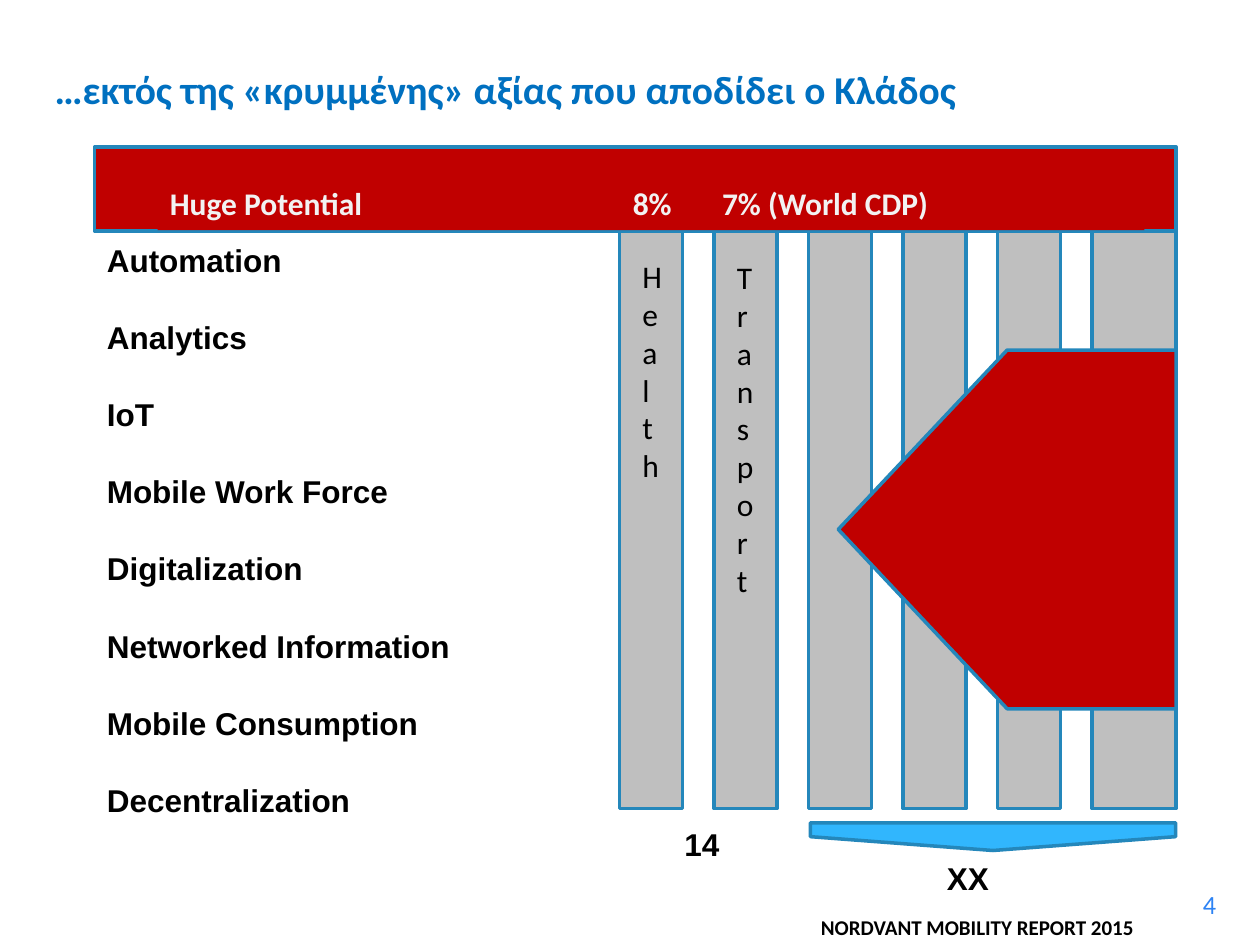
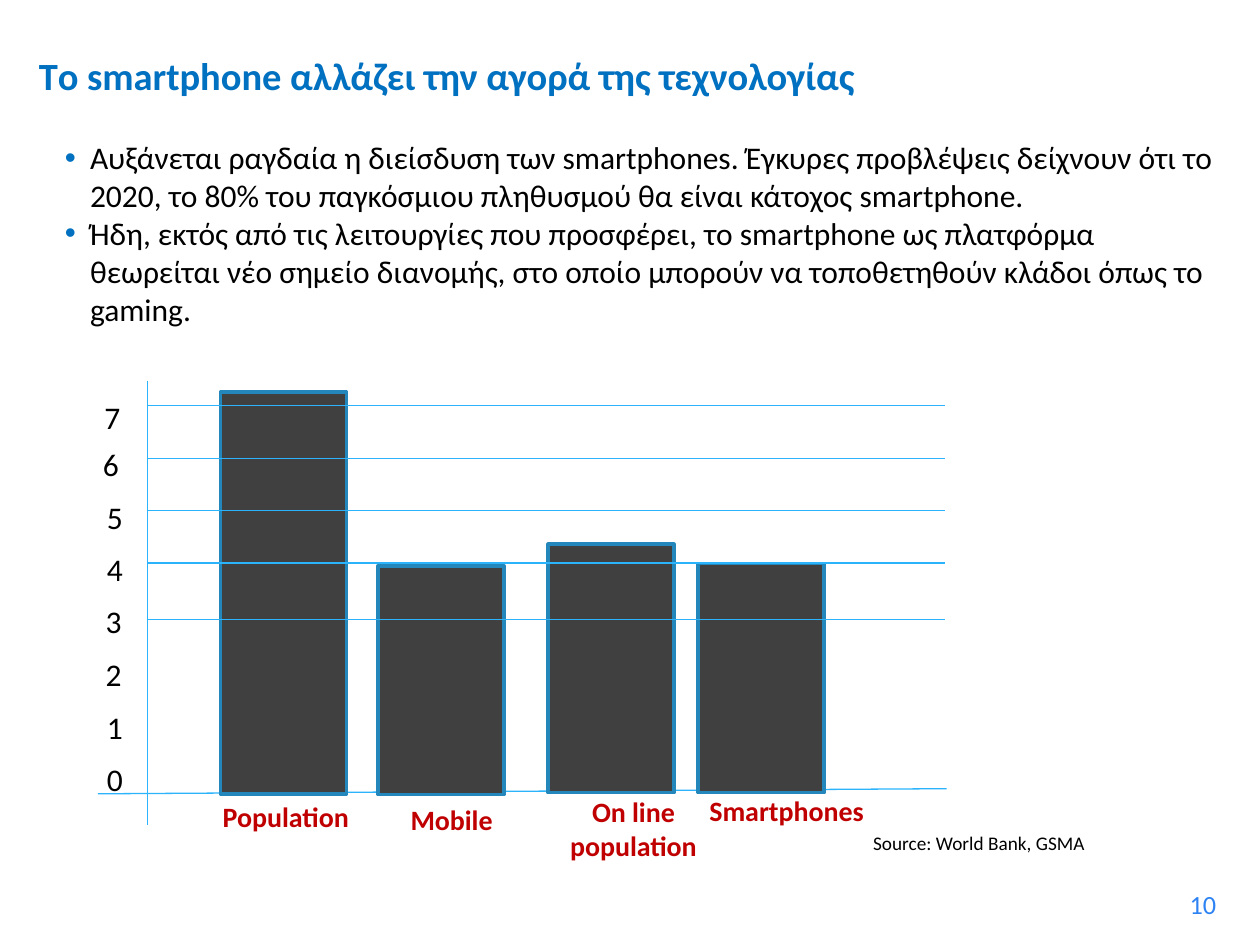
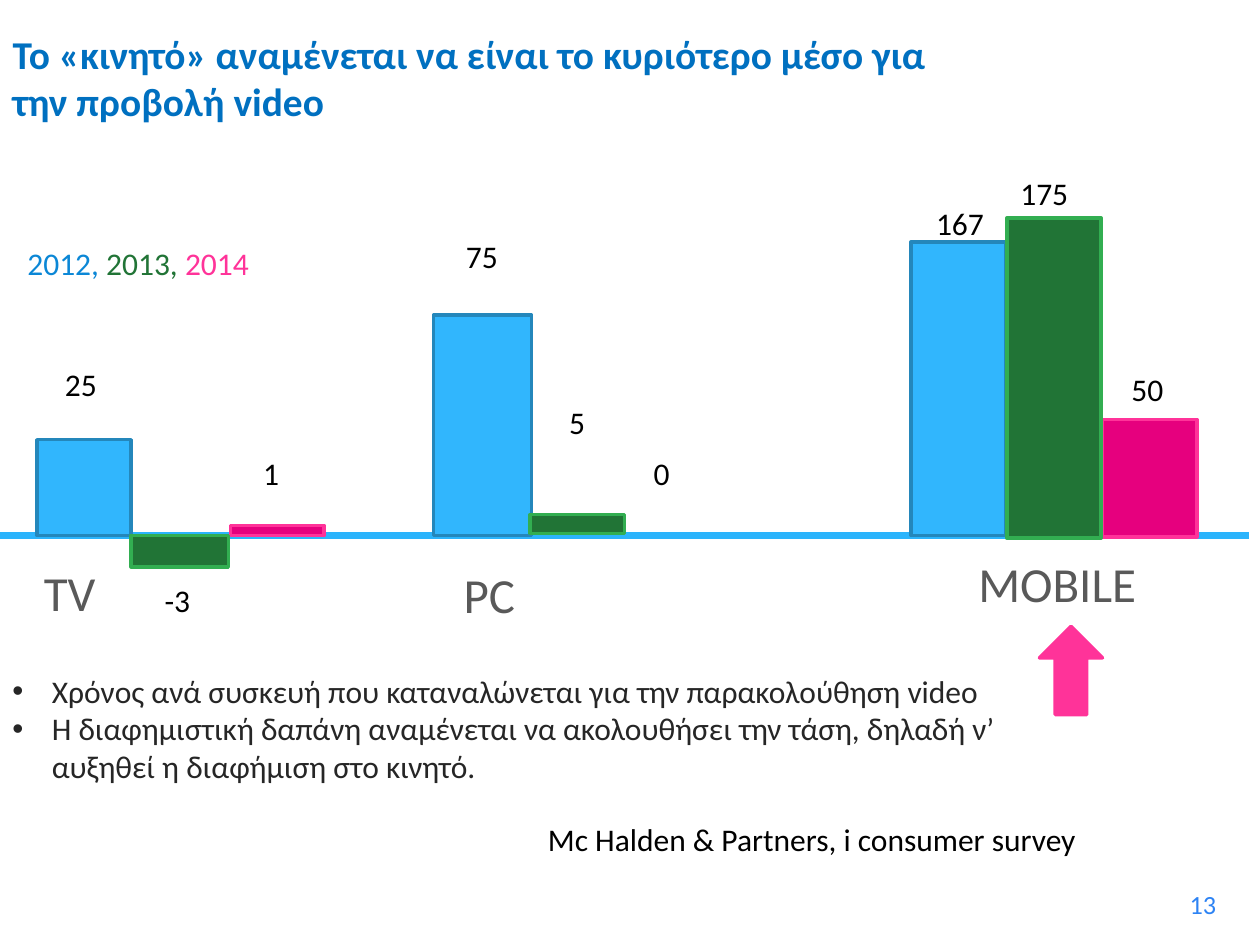
from lxml import etree
from pptx import Presentation
from pptx import util as u
from pptx.dml.color import RGBColor
from pptx.enum import shapes, text
from pptx.oxml import ns

Pt = u.Pt
SHAPE = shapes.MSO_SHAPE
ALIGN = text.PP_ALIGN

# Shared style
TITLE_BLUE = RGBColor(0x00, 0x70, 0xC0)
NUMBER_BLUE = RGBColor(0x2D, 0x83, 0xF4)
SKY = RGBColor(0x31, 0xB6, 0xFD)
AXIS_BLUE = RGBColor(0x2B, 0xB4, 0xFC)
EDGE_BLUE = RGBColor(0x24, 0x87, 0xBB)
YEAR_BLUE = RGBColor(0x0B, 0x87, 0xD6)
RED = RGBColor(0xC0, 0x00, 0x00)
GREEN = RGBColor(0x21, 0x74, 0x36)
EDGE_GREEN = RGBColor(0x32, 0xAE, 0x51)
MAGENTA = RGBColor(0xE6, 0x00, 0x7E)
PINK = RGBColor(0xFF, 0x33, 0x99)
BLACK = RGBColor(0x00, 0x00, 0x00)
CHARCOAL = RGBColor(0x26, 0x26, 0x26)
DARK_GREY = RGBColor(0x40, 0x40, 0x40)
MID_GREY = RGBColor(0x59, 0x59, 0x59)
SILVER = RGBColor(0xBF, 0xBF, 0xBF)
OFF_WHITE = RGBColor(0xF2, 0xF2, 0xF2)


def add_child(parent, tag, **attributes):
    return etree.SubElement(parent, ns.qn(tag), **attributes)


def add_bullet(paragraph, indent, color):
    properties = paragraph._p.get_or_add_pPr()
    properties.set("marL", str(Pt(indent)))
    properties.set("indent", str(-Pt(indent)))
    if color is not None:
        add_child(add_child(properties, "a:buClr"), "a:srgbClr", val=str(color))
    add_child(properties, "a:buFont", typeface="Arial")
    add_child(properties, "a:buChar", char="•")


def add_tabs(paragraph, stops):
    tab_list = add_child(paragraph._p.get_or_add_pPr(), "a:tabLst")
    for stop in stops:
        add_child(tab_list, "a:tab", pos=str(Pt(stop)), algn="l")


def write(frame, content, size=18, color=BLACK, bold=False, font="Calibri",
          align=ALIGN.LEFT, anchor=text.MSO_ANCHOR.TOP, wrap=True, gap=0,
          indent=0, bullet_color=None, tabs=()):
    """Fill a frame; content is a string or a list of paragraphs,
    each a string or a list of (words, color) runs."""
    frame.word_wrap = wrap
    frame.auto_size = text.MSO_AUTO_SIZE.NONE
    frame.vertical_anchor = anchor
    lines = [content] if isinstance(content, str) else content
    for index, line in enumerate(lines):
        paragraph = frame.add_paragraph() if index else frame.paragraphs[0]
        paragraph.alignment = align
        if index and gap:
            paragraph.space_before = Pt(gap)
        if indent:
            add_bullet(paragraph, indent, bullet_color)
        if tabs:
            add_tabs(paragraph, tabs)
        runs = [(line, color)] if isinstance(line, str) else line
        for words, run_color in runs:
            run = paragraph.add_run()
            run.text = words
            run.font.name = font
            run.font.size = Pt(size)
            run.font.bold = bold
            run.font.color.rgb = run_color


def add_text(slide, content, left, top, width, height=29, **style):
    box = slide.shapes.add_textbox(Pt(left), Pt(top), Pt(width), Pt(height))
    write(box.text_frame, content, **style)


def add_block(slide, left, top, width, height, fill, edge=EDGE_BLUE,
              kind=SHAPE.RECTANGLE, rotation=0):
    shape = slide.shapes.add_shape(kind, Pt(left), Pt(top), Pt(width), Pt(height))
    shape.shadow.inherit = False
    shape.rotation = rotation
    shape.fill.solid()
    shape.fill.fore_color.rgb = fill
    if edge is None:
        shape.line.fill.background()
    else:
        shape.line.color.rgb = edge
        shape.line.width = Pt(2)
    return shape


def add_line(slide, x1, y1, x2, y2, width=0.75):
    line = slide.shapes.add_connector(
        shapes.MSO_CONNECTOR.STRAIGHT, Pt(x1), Pt(y1), Pt(x2), Pt(y2))
    line.line.color.rgb = AXIS_BLUE
    line.line.width = Pt(width)
    add_child(line._element.spPr, "a:effectLst")


def new_slide(presentation, title, number, left, top, width, height=66, size=22.5):
    slide = presentation.slides.add_slide(presentation.slide_layouts[5])
    holder = slide.shapes.title
    holder.left, holder.top = Pt(left), Pt(top)
    holder.width, holder.height = Pt(width), Pt(height)
    write(holder.text_frame, title, size=size, color=TITLE_BLUE, bold=True,
          anchor=text.MSO_ANCHOR.MIDDLE)
    add_text(slide, number, 534, 504, 168, size=15, color=NUMBER_BLUE,
             align=ALIGN.RIGHT)
    return slide


def build_potential(presentation):
    slide = new_slide(presentation,
                      "…εκτός της «κρυμμένης» αξίας που αποδίδει ο Κλάδος",
                      "4", 24, 18, 546)
    trends = ["Automation", "Analytics", "IoT", "Mobile Work Force",
              "Digitalization", "Networked Information",
              "Mobile Consumption", "Decentralization"]
    add_text(slide, trends, 54, 134, 216, 334, font="Arial", bold=True, gap=22.5)

    # Industry columns, the last one wider
    for column in range(6):
        add_block(slide, 354 + 54 * column, 132, 48 if column == 5 else 36, 330,
                  SILVER)
    add_block(slide, 479, 200, 193, 205, RED, kind=SHAPE.PENTAGON, rotation=180)

    # Red header band
    add_block(slide, 54, 84, 618, 48, RED)
    header = add_block(slide, 90, 101.5, 564, 30, RED, edge=None)
    write(header.text_frame, "Huge Potential\t8%\t7% (World CDP)", bold=True,
          color=OFF_WHITE, tabs=(264.5, 315.5))

    # Totals under the columns
    add_text(slide, "14", 384, 468, 36, font="Arial", bold=True)
    add_block(slide, 559.5, 373.7, 15.8, 208.8, SKY, kind=SHAPE.PENTAGON,
              rotation=90)
    add_text(slide, "ΧΧ", 534, 487.5, 81, font="Arial", bold=True)

    # Column names, one letter per line
    add_text(slide, ["Heal", "th"], 360, 143.5, 24, 138)
    add_text(slide, "Transport", 414, 144, 24, 204)
    add_text(slide, "NORDVANT MOBILITY REPORT 2015", 462, 519, 252, 22,
             size=12, bold=True)


def build_smartphone(presentation):
    slide = new_slide(presentation,
                      "Tο smartphone αλλάζει την αγορά της τεχνολογίας",
                      "10", 15, 10, 567, size=22)
    add_text(slide, [
        "Αυξάνεται ραγδαία η διείσδυση των smartphones. Έγκυρες προβλέψεις "
        "δείχνουν ότι τo 2020, τo 80% του παγκόσμιου πληθυσμού θα είναι κάτοχος "
        "smartphone.",
        "Ήδη, εκτός από τις λειτουργίες που προσφέρει, το smartphone ως πλατφόρμα "
        "θεωρείται νέο σημείο διανομής, στο οποίο μπορούν να τοποθετηθούν κλάδοι "
        "όπως το gaming."],
        30, 75.6, 678, 366, indent=14.4, bullet_color=TITLE_BLUE)

    # Axes, bars and gridlines
    add_line(slide, 56, 453.6, 541, 450.7)
    for left, top, height in ((126, 224, 229.7), (216, 323.3, 130.7),
                              (313.2, 311, 142), (399, 322, 131)):
        add_block(slide, left, top, 72, height, DARK_GREY)
    add_line(slide, 84.2, 217.5, 84.2, 471.5)
    for y in (231.8, 262, 291.6, 321.8, 354.2):
        add_line(slide, 84, y, 540, y)

    # Scale from 7 down to 0
    scale = ((52.6, 224), (51.8, 250.6), (54, 280.8), (54, 311), (53.3, 340.6),
             (53.3, 370.8), (54, 401), (54, 430.6))
    for value, (left, top) in zip(range(7, -1, -1), scale):
        add_text(slide, str(value), left, top, 30)

    # Bar names
    for name, left, top, width, align in (
            ("Population", 120.2, 453.6, 104, ALIGN.LEFT),
            ("Mobile", 227.5, 455, 76, ALIGN.LEFT),
            ("On line population", 299, 450.7, 126, ALIGN.CENTER),
            ("Smartphones", 389.5, 450, 120, ALIGN.CENTER)):
        add_text(slide, name, left, top, width, size=16, color=RED, bold=True,
                 align=align)
    add_text(slide, "Source: World Bank, GSMA", 491.8, 471.6, 171, 21, size=11)


def build_video(presentation):
    slide = new_slide(presentation,
                      "Το «κινητό» αναμένεται να είναι το κυριότερο μέσο για "
                      "την προβολή video",
                      "13", 0, 12, 546, height=64)
    add_line(slide, 0, 306, 714, 306, width=4.5)

    # Bars by year
    blue, green, pink = (SKY, EDGE_BLUE), (GREEN, EDGE_GREEN), (MAGENTA, PINK)
    for left, top, width, height, (fill, edge) in (
            (21, 251.3, 54, 54.7, blue), (247.7, 180, 56, 126, blue),
            (520.6, 138.2, 54, 167.8, blue), (131.8, 300.2, 53.3, 5.8, pink),
            (75, 306, 55.5, 18, green), (303, 294, 54, 10.8, green),
            (630, 239.8, 54, 67, pink), (575.3, 124.6, 54, 182.9, green)):
        add_block(slide, left, top, width, height, fill, edge)

    # Device names
    for name, left, top, width in (("TV", 18, 318.2, 48), ("PC", 257.8, 319, 72),
                                   ("MOBILE", 552, 312.5, 120)):
        add_text(slide, name, left, top, width, 41, size=28, color=MID_GREY)

    # Bar values
    for value, left, top in (
            ("25", 30, 205), ("-3", 87, 328.3), ("1", 143.3, 255.6),
            ("75", 259.2, 131.8), ("5", 318.2, 226.8), ("0", 366.5, 255.6),
            ("167", 527.8, 113), ("175", 576, 95.8), ("50", 639.4, 208)):
        add_text(slide, value, left, top, 42)

    # Legend and conclusions
    add_text(slide, [[("2012, ", YEAR_BLUE), ("2013, ", GREEN), ("2014", PINK)]],
             8.6, 136, 150)
    add_text(slide, [
        "Χρόνος ανά συσκευή που καταναλώνεται για την παρακολούθηση video",
        "Η διαφημιστική δαπάνη αναμένεται να ακολουθήσει την τάση, δηλαδή ν’ "
        "αυξηθεί η διαφήμιση στο κινητό."],
        0, 380.2, 594, 94, color=CHARCOAL, indent=22.5)
    add_text(slide, "Mc Halden & Partners, i consumer survey", 306, 465, 321,
             wrap=False)
    add_block(slide, 594, 358, 36, 50.4, PINK, PINK, kind=SHAPE.UP_ARROW)


def main():
    presentation = Presentation()
    presentation.slide_width, presentation.slide_height = Pt(720), Pt(540)
    build_potential(presentation)
    build_smartphone(presentation)
    build_video(presentation)
    presentation.save("out.pptx")


if __name__ == "__main__":
    main()
